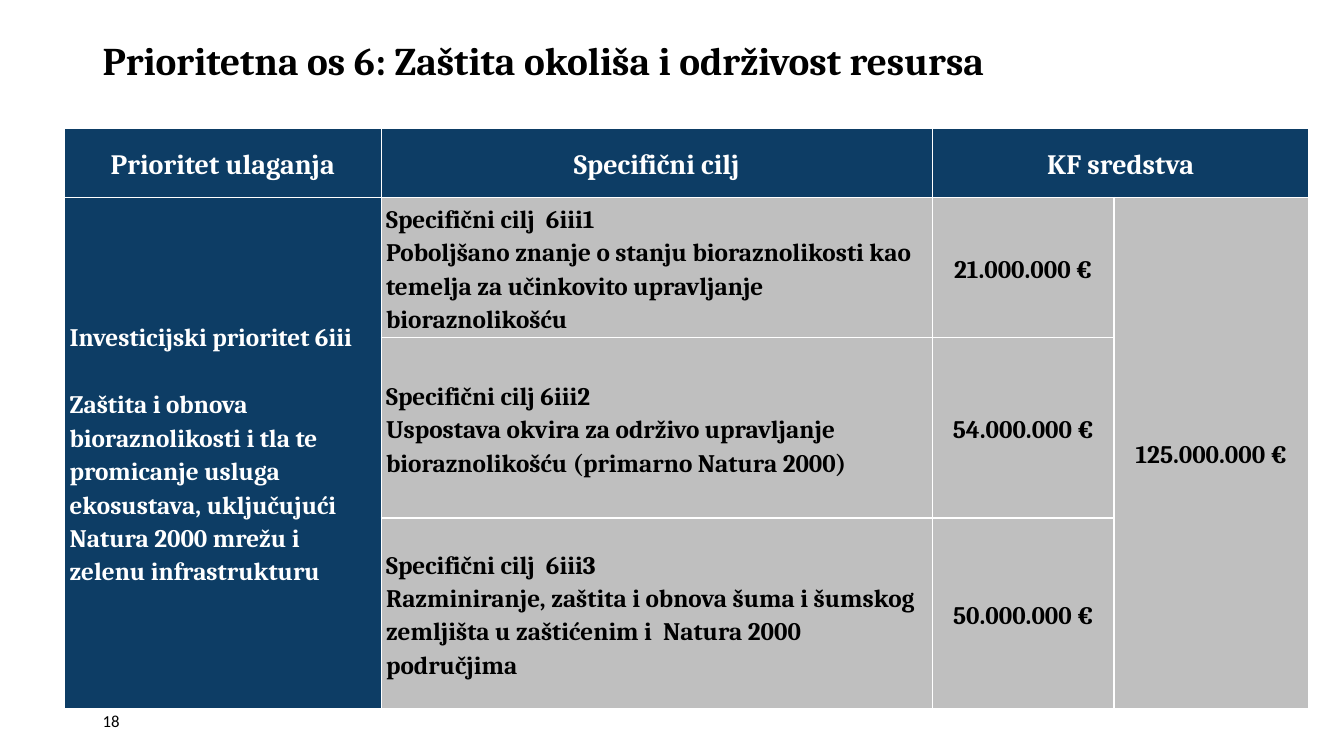
import pptx
import pptx.dml.color
import pptx.enum.text
import pptx.oxml.ns
import pptx.util
import lxml.etree

COLORS = {"navy": "0D3D65", "grey": "BFBFBF", "white": "FFFFFF", "black": "000000"}
HEADING_FONT = "Cambria"
NUMBER_FONT = "Calibri"
LEFT = pptx.enum.text.PP_ALIGN.LEFT
CENTER = pptx.enum.text.PP_ALIGN.CENTER
MIDDLE = pptx.enum.text.MSO_ANCHOR.MIDDLE

COLUMN_WIDTHS = [3.14, 5.47, 1.8, 1.93]
ROW_HEIGHTS = [0.69, 1.34, 1.79, 1.89]
HEADERS = ["Prioritet ulaganja", "Specifični cilj", "KF sredstva"]
PRIORITY = [
    "Investicijski prioritet 6iii",
    "Zaštita i obnova bioraznolikosti i tla te promicanje usluga ekosustava, "
    "uključujući Natura 2000 mrežu i zelenu infrastrukturu",
]
GOALS = [
    ("Specifični cilj  6iii1",
     "Poboljšano znanje o stanju bioraznolikosti kao temelja za učinkovito "
     "upravljanje bioraznolikošću", "21.000.000 €"),
    ("Specifični cilj 6iii2",
     "Uspostava okvira za održivo upravljanje bioraznolikošću (primarno Natura 2000)",
     "54.000.000 €"),
    ("Specifični cilj  6iii3",
     "Razminiranje, zaštita i obnova šuma i šumskog zemljišta u zaštićenim i  "
     "Natura 2000 područjima", "50.000.000 €"),
]
TOTAL = "125.000.000 €"


def color(name):
    return pptx.dml.color.RGBColor.from_string(COLORS[name])


def write(frame, lines, size, color_name, font=HEADING_FONT, bold=True,
          align=LEFT, line_spacing=1.0, gap=0):
    """Write one paragraph per line, with gap points between paragraphs."""
    for index, line in enumerate(lines):
        paragraph = frame.paragraphs[0] if index == 0 else frame.add_paragraph()
        paragraph.alignment = align
        paragraph.line_spacing = line_spacing
        if index:
            paragraph.space_before = pptx.util.Pt(gap)
        run = paragraph.add_run()
        run.text = line
        run.font.name = font
        run.font.size = pptx.util.Pt(size)
        run.font.bold = bold
        run.font.color.rgb = color(color_name)


def add_text(slide, box, text, size, **style):
    shape = slide.shapes.add_textbox(*map(pptx.util.Inches, box))
    frame = shape.text_frame
    frame.word_wrap = True
    frame.vertical_anchor = MIDDLE
    write(frame, [text], size, "black", **style)


def add_borders(cell):
    properties = cell._tc.get_or_add_tcPr()
    for side in ("lnL", "lnR", "lnT", "lnB"):
        line = lxml.etree.SubElement(
            properties, pptx.oxml.ns.qn(f"a:{side}"), w=str(pptx.util.Pt(1)))
        fill = lxml.etree.SubElement(line, pptx.oxml.ns.qn("a:solidFill"))
        lxml.etree.SubElement(fill, pptx.oxml.ns.qn("a:srgbClr"), val=COLORS["white"])


def fill_cell(cell, lines, fill, text_color, size=18, align=CENTER, gap=0):
    cell.fill.solid()
    cell.fill.fore_color.rgb = color(fill)
    write(cell.text_frame, lines, size, text_color, align=align,
          line_spacing=1.15, gap=gap)


def add_funding_table(slide, left, top):
    shape = slide.shapes.add_table(
        len(ROW_HEIGHTS), len(COLUMN_WIDTHS),
        *map(pptx.util.Inches, (left, top, sum(COLUMN_WIDTHS), sum(ROW_HEIGHTS))))
    table = shape.table
    table.horz_banding = False
    for column, width in zip(table.columns, COLUMN_WIDTHS):
        column.width = pptx.util.Inches(width)
    for row, height in zip(table.rows, ROW_HEIGHTS):
        row.height = pptx.util.Inches(height)
    for cell in table.iter_cells():
        cell.margin_left = cell.margin_right = pptx.util.Inches(0.05)
        cell.margin_top = pptx.util.Inches(0.01)
        cell.margin_bottom = 0
        cell.vertical_anchor = MIDDLE
        add_borders(cell)

    table.cell(0, 2).merge(table.cell(0, 3))
    for column in (0, 3):
        table.cell(1, column).merge(table.cell(3, column))

    for column, header in enumerate(HEADERS):
        fill_cell(table.cell(0, column), [header], "navy", "white", size=20)
    fill_cell(table.cell(1, 0), PRIORITY, "navy", "white", align=LEFT, gap=24)
    for row, (code, goal, amount) in enumerate(GOALS, start=1):
        fill_cell(table.cell(row, 1), [code, goal], "grey", "black", align=LEFT)
        fill_cell(table.cell(row, 2), [amount], "grey", "black")
    fill_cell(table.cell(1, 3), [TOTAL], "grey", "black")


def main():
    presentation = pptx.Presentation()
    presentation.slide_width = pptx.util.Inches(13.33)
    presentation.slide_height = pptx.util.Inches(7.5)
    slide = presentation.slides.add_slide(presentation.slide_layouts[6])
    add_text(slide, (0.92, 0.12, 11.5, 1.01),
             "Prioritetna os 6: Zaštita okoliša i održivost resursa", 28,
             line_spacing=0.9)
    add_funding_table(slide, 0.64, 1.27)
    add_text(slide, (0.92, 6.95, 3, 0.4), "18", 12, font=NUMBER_FONT, bold=False)
    presentation.save("out.pptx")


if __name__ == "__main__":
    main()
